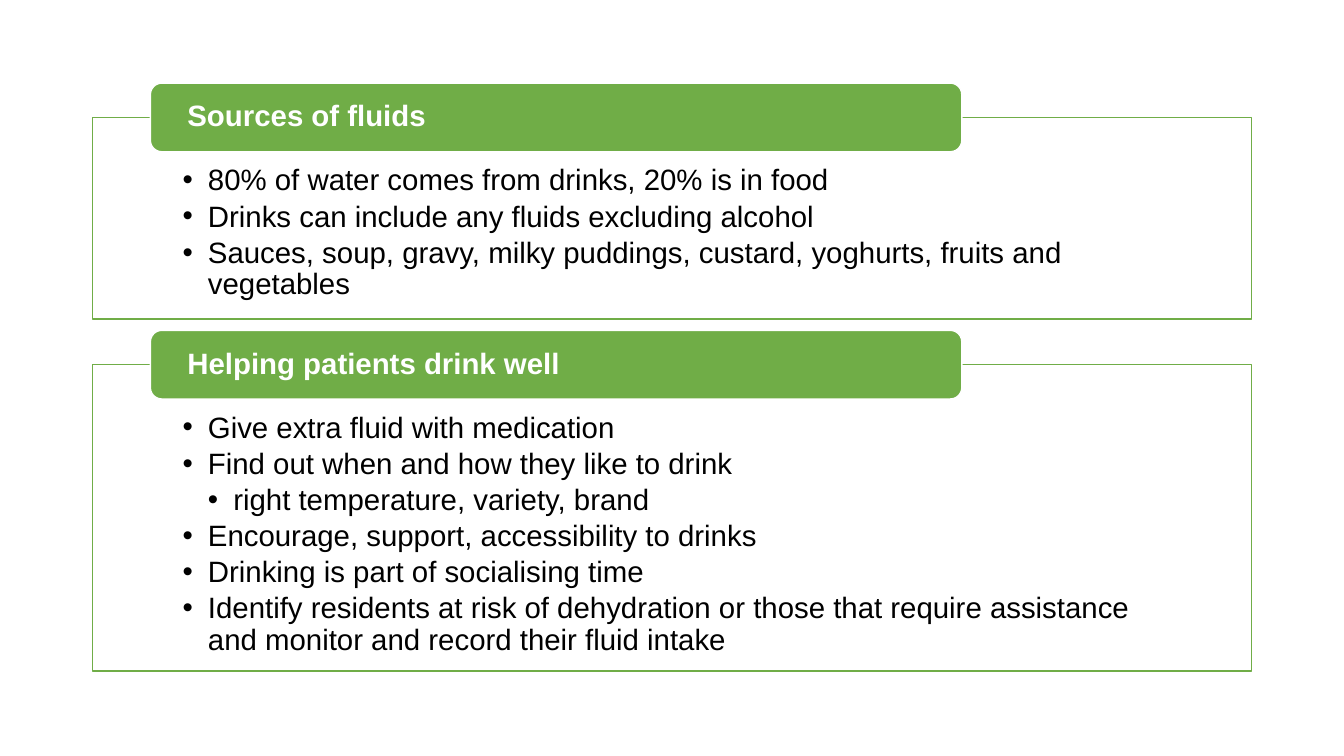
from lxml import etree
from pptx import Presentation
from pptx.dml.color import RGBColor
from pptx.enum.text import MSO_ANCHOR, MSO_AUTO_SIZE, PP_ALIGN
from pptx.oxml.ns import qn
from pptx.util import Cm, Pt

GREEN = RGBColor(0x70, 0xAD, 0x47)
WHITE = RGBColor(0xFF, 0xFF, 0xFF)
BLACK = RGBColor(0x00, 0x00, 0x00)

TOP, MIDDLE = MSO_ANCHOR.TOP, MSO_ANCHOR.MIDDLE
LEFT = PP_ALIGN.LEFT
NO_AUTOFIT = MSO_AUTO_SIZE.NONE

FONT_NAME, FONT_SIZE = "Arial", Pt(21)
COMPARISON_LAYOUT = 4
INDENT = Cm(0.64)

PANEL_LEFT, PANEL_WIDTH = Cm(2.33), Cm(29.21)
HEADING_LEFT, HEADING_WIDTH, HEADING_HEIGHT = Cm(3.79), Cm(20.45), Cm(1.73)
HEADING_RISE = HEADING_HEIGHT // 2

SECTIONS = [
    (
        "Sources of fluids",
        Cm(2.96),
        Cm(5.08),
        [
            ("80% of water comes from drinks, 20% is in food", 0),
            ("Drinks can include any fluids excluding alcohol", 0),
            ("Sauces, soup, gravy, milky puddings, custard, yoghurts, "
             "fruits and vegetables", 0),
        ],
    ),
    (
        "Helping patients drink well",
        Cm(9.19),
        Cm(7.72),
        [
            ("Give extra fluid with medication", 0),
            ("Find out when and how they like to drink", 0),
            ("right temperature, variety, brand", 1),
            ("Encourage, support, accessibility to drinks", 0),
            ("Drinking is part of socialising time", 0),
            ("Identify residents at risk of dehydration or those that require "
             "assistance and monitor and record their fluid intake", 0),
        ],
    ),
]


def place(shape, left, top, width, height, geometry, fill, line):
    shape.left, shape.top, shape.width, shape.height = left, top, width, height
    preset = etree.SubElement(shape._element.spPr, qn("a:prstGeom"), prst=geometry)
    etree.SubElement(preset, qn("a:avLst"))
    shape.fill.solid()
    shape.fill.fore_color.rgb = fill
    shape.line.color.rgb = line
    shape.line.width = Pt(1)


def set_frame(text_frame, anchor, side, top, bottom):
    text_frame.auto_size = NO_AUTOFIT
    text_frame.word_wrap = True
    text_frame.vertical_anchor = anchor
    text_frame.margin_left = text_frame.margin_right = side
    text_frame.margin_top, text_frame.margin_bottom = top, bottom


def format_paragraph(paragraph, color, bold, space_after):
    paragraph.alignment = LEFT
    paragraph.line_spacing = 0.9
    paragraph.space_before = Pt(0)
    paragraph.space_after = space_after
    for run in paragraph.runs:
        run.font.name = FONT_NAME
        run.font.size = FONT_SIZE
        run.font.bold = bold
        run.font.color.rgb = color


def add_bullet(paragraph):
    properties = paragraph._p.get_or_add_pPr()
    properties.set("marL", str(INDENT * (paragraph.level + 1)))
    properties.set("indent", str(-INDENT))
    etree.SubElement(properties, qn("a:buFont"), typeface=FONT_NAME)
    etree.SubElement(properties, qn("a:buChar"), char="•")


def fill_heading(heading, text, panel_top):
    place(heading, HEADING_LEFT, panel_top - HEADING_RISE, HEADING_WIDTH,
          HEADING_HEIGHT, "roundRect", GREEN, WHITE)
    text_frame = heading.text_frame
    text_frame.text = text
    set_frame(text_frame, MIDDLE, Cm(0.85), 0, 0)
    format_paragraph(text_frame.paragraphs[0], WHITE, True, Pt(0))


def fill_panel(panel, items, top, height):
    place(panel, PANEL_LEFT, top, PANEL_WIDTH, height, "rect", WHITE, GREEN)
    text_frame = panel.text_frame
    text_frame.text = "\n".join(text for text, level in items)
    set_frame(text_frame, TOP, Cm(2.27), Cm(1.21), Cm(0.4))
    for paragraph, (text, level) in zip(text_frame.paragraphs, items):
        paragraph.level = level
        format_paragraph(paragraph, BLACK, False, Pt(3.15))
        add_bullet(paragraph)


def main():
    presentation = Presentation()
    presentation.slide_width, presentation.slide_height = Cm(33.87), Cm(19.05)
    layout = presentation.slide_layouts[COMPARISON_LAYOUT]
    slide = presentation.slides.add_slide(layout)
    title, *placeholders = slide.placeholders
    title._element.getparent().remove(title._element)

    pairs = zip(placeholders[::2], placeholders[1::2])
    for (heading, panel), (text, top, height, items) in zip(pairs, SECTIONS):
        fill_panel(panel, items, top, height)
        fill_heading(heading, text, top)
        panel._element.addnext(heading._element)

    presentation.save("out.pptx")


if __name__ == "__main__":
    main()
